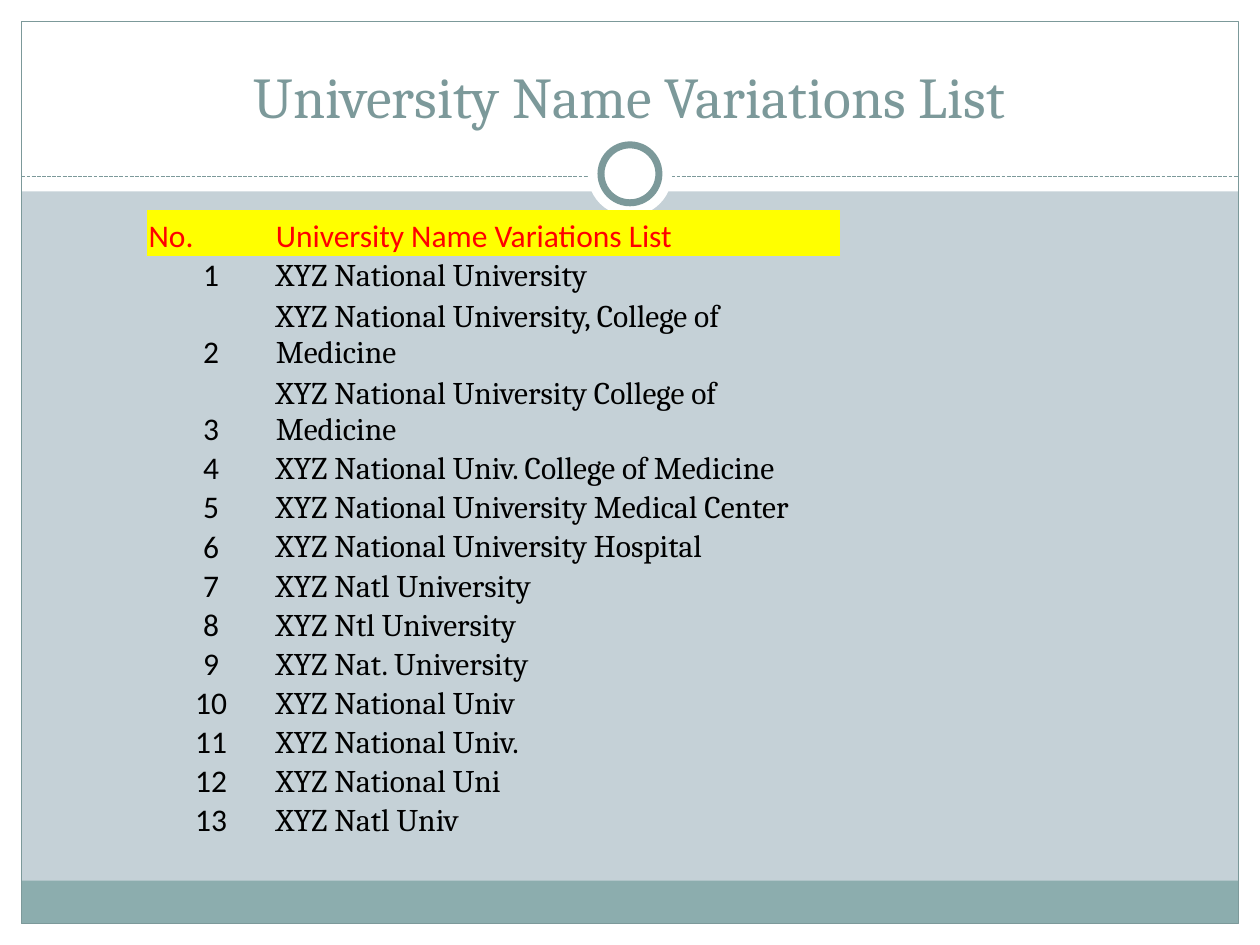
from lxml.etree import SubElement
from pptx import Presentation
from pptx.dml.color import RGBColor
from pptx.enum.dml import MSO_LINE
from pptx.enum.shapes import MSO_CONNECTOR, MSO_SHAPE
from pptx.enum.text import MSO_ANCHOR, PP_ALIGN
from pptx.oxml.ns import qn
from pptx.util import Inches, Pt

TITLE = "University Name Variations List"
HEADINGS = ("No.", "University Name Variations List")
NAMES = [
    "XYZ National University",
    "XYZ National University, College of Medicine",
    "XYZ National University College of Medicine",
    "XYZ National Univ. College of Medicine",
    "XYZ National University Medical Center",
    "XYZ National University Hospital",
    "XYZ Natl University",
    "XYZ Ntl University",
    "XYZ Nat. University",
    "XYZ National Univ",
    "XYZ National Univ.",
    "XYZ National Uni",
    "XYZ Natl Univ",
]

THEME = {
    "background": "C5D1D7", "white": "FFFFFF", "band": "8CADAE", "accent": "7C999A",
    "highlight": "FFFF00", "heading": "FF0000", "text": "000000",
    "serif": "Cambria", "sans": "Calibri", "title_size": 33, "table_size": 18,
}
WIDTH, HEIGHT, MARGIN = 10, 7.5, 0.17
COLUMNS = (1.01, 4.49)
HEADER_HEIGHT, ROW_HEIGHT = 0.36, 0.31
PLAIN_TABLE = "{2D5ABB26-0587-4C30-8999-92F81FD0307C}"


def color(name):
    return RGBColor.from_string(THEME[name])


def add_panel(page, kind, area, fill=None, line_width=None):
    panel = page.shapes.add_shape(kind, *map(Inches, area))
    panel.shadow.inherit = False
    if fill:
        panel.fill.solid()
        panel.fill.fore_color.rgb = color(fill)
    else:
        panel.fill.background()
    if line_width:
        panel.line.color.rgb = color("accent")
        panel.line.width = Pt(line_width)
    else:
        panel.line.fill.background()


def style_text(para, face, size, shade, align):
    para.alignment = align
    for span in para.runs:
        span.font.name = THEME[face]
        span.font.size = Pt(THEME[size])
        span.font.color.rgb = color(shade)


def add_frame(page):
    inner_width, inner_height = WIDTH - 2 * MARGIN, HEIGHT - 2 * MARGIN
    for area in (
        (0, HEIGHT - MARGIN, WIDTH, MARGIN),
        (0, 0, WIDTH, 1.52),
        (0, 0, MARGIN, HEIGHT),
        (WIDTH - MARGIN, 0, MARGIN, HEIGHT),
    ):
        add_panel(page, MSO_SHAPE.RECTANGLE, area, "white")
    add_panel(page, MSO_SHAPE.RECTANGLE, (MARGIN, 6.99, inner_width, 0.34), "band")
    add_panel(page, MSO_SHAPE.RECTANGLE, (MARGIN, MARGIN, inner_width, inner_height), line_width=0.75)

    divider = page.shapes.add_connector(
        MSO_CONNECTOR.STRAIGHT, Inches(MARGIN), Inches(1.4), Inches(WIDTH - MARGIN), Inches(1.4))
    divider.line.color.rgb = color("accent")
    divider.line.width = Pt(0.75)
    divider.line.dash_style = MSO_LINE.SQUARE_DOT
    SubElement(divider.element.spPr, qn("a:effectLst"))

    for diameter, line_width in ((0.67, None), (0.46, 4)):
        area = (WIDTH / 2 - diameter / 2, 1.38 - diameter / 2, diameter, diameter)
        add_panel(page, MSO_SHAPE.OVAL, area, "white", line_width)


def add_title(page):
    box = page.shapes.add_textbox(Inches(0.33), Inches(0.25), Inches(9.33), Inches(0.83))
    frame = box.text_frame
    frame.word_wrap = True
    frame.vertical_anchor = MSO_ANCHOR.BOTTOM
    frame.text = TITLE
    style_text(frame.paragraphs[0], "serif", "title_size", "accent", PP_ALIGN.CENTER)


def add_names(page):
    rows = [HEADINGS] + [(str(number), name) for number, name in enumerate(NAMES, 1)]
    heights = [HEADER_HEIGHT] + [ROW_HEIGHT] * len(NAMES)
    holder = page.shapes.add_table(
        len(rows), len(COLUMNS), Inches(1.17), Inches(1.67),
        Inches(sum(COLUMNS)), Inches(sum(heights)))
    table = holder.table
    table.first_row = table.horz_banding = False
    next(holder.element.iter(qn("a:tableStyleId"))).text = PLAIN_TABLE
    for column, width in zip(table.columns, COLUMNS):
        column.width = Inches(width)
    for row_index, (row, height) in enumerate(zip(rows, heights)):
        table.rows[row_index].height = Inches(height)
        for column_index, text in enumerate(row):
            cell = table.cell(row_index, column_index)
            cell.margin_left = cell.margin_right = cell.margin_top = Inches(0.01)
            cell.margin_bottom = 0
            cell.vertical_anchor = MSO_ANCHOR.BOTTOM
            cell.text = text
            para = cell.text_frame.paragraphs[0]
            if row_index == 0:
                cell.fill.solid()
                cell.fill.fore_color.rgb = color("highlight")
                style_text(para, "sans", "table_size", "heading", PP_ALIGN.LEFT)
            else:
                cell.fill.background()
                face, align = (("sans", PP_ALIGN.CENTER), ("serif", PP_ALIGN.LEFT))[column_index]
                style_text(para, face, "table_size", "text", align)


def main():
    deck = Presentation()
    deck.slide_width, deck.slide_height = Inches(WIDTH), Inches(HEIGHT)
    page = deck.slides.add_slide(deck.slide_layouts[6])
    page.background.fill.solid()
    page.background.fill.fore_color.rgb = color("background")
    add_frame(page)
    add_title(page)
    add_names(page)
    deck.save("out.pptx")


if __name__ == "__main__":
    main()
